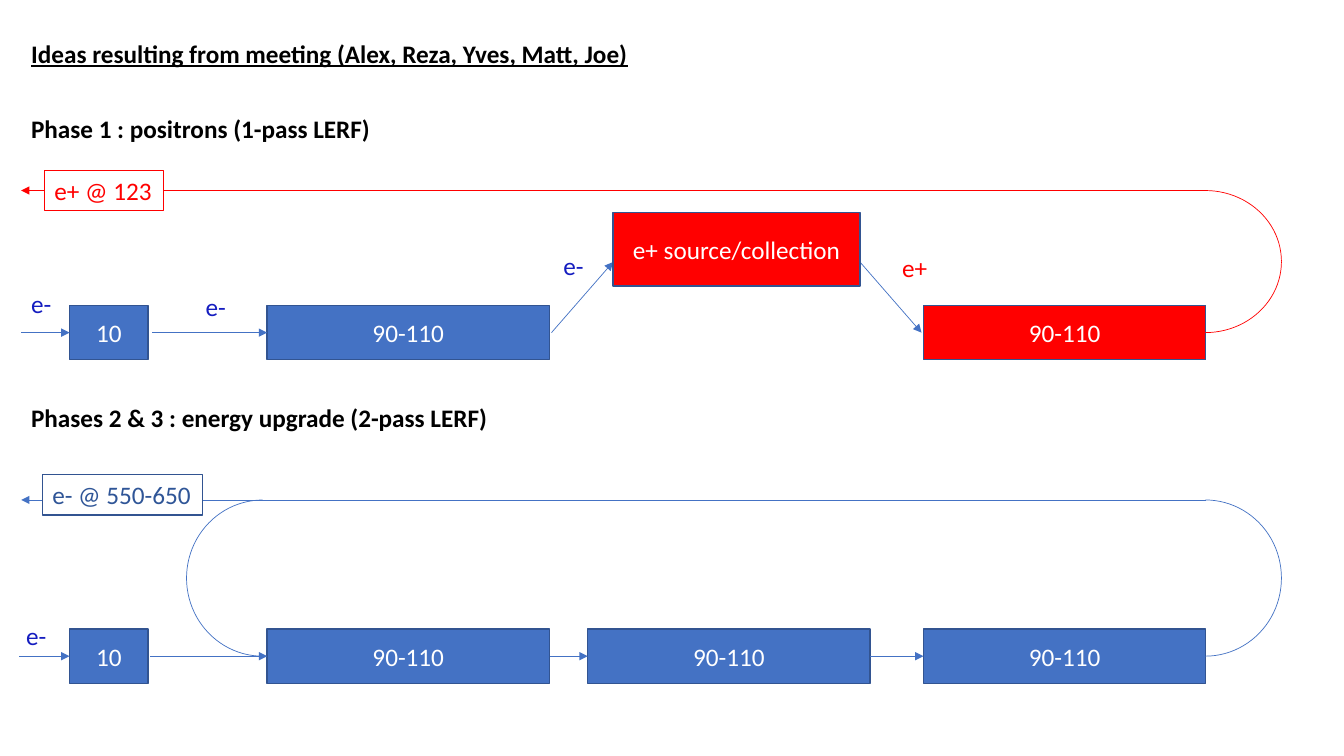
"""Build the slide of positron and energy upgrade phases as beamline diagrams."""
from lxml import etree
from pptx import Presentation
from pptx.dml.color import RGBColor
from pptx.enum.shapes import MSO_CONNECTOR, MSO_SHAPE
from pptx.enum.text import MSO_ANCHOR, MSO_AUTO_SIZE, PP_ALIGN
from pptx.oxml.ns import qn
from pptx.util import Inches, Pt

STRAIGHT = MSO_CONNECTOR.STRAIGHT
RECTANGLE, ARC = MSO_SHAPE.RECTANGLE, MSO_SHAPE.ARC
TOP, MIDDLE = MSO_ANCHOR.TOP, MSO_ANCHOR.MIDDLE
LEFT, CENTER = PP_ALIGN.LEFT, PP_ALIGN.CENTER
FIXED = MSO_AUTO_SIZE.NONE
LEFT_SIDE, RIGHT_SIDE = 1, 3

color = RGBColor.from_string
BLUE, EDGE, RED, WHITE, BLACK = "4472C4", "325491", "FF0000", "FFFFFF", "000000"
ELECTRON, ENERGY = "151DC0", "2F5597"


def write(box, text, ink, align=LEFT, anchor=TOP, bold=False, underline=False):
    frame = box.text_frame
    frame.auto_size = FIXED
    frame.word_wrap = align == CENTER
    frame.vertical_anchor = anchor
    para = frame.paragraphs[0]
    para.alignment = align
    span = para.add_run()
    span.text = text
    span.font.name = "Calibri"
    span.font.size = Pt(18)
    span.font.bold = bold
    span.font.underline = underline
    span.font.color.rgb = color(ink)


def add_arrow(shapes, start, end, ink):
    arrow = shapes.add_connector(STRAIGHT, *map(Inches, start + end))
    arrow.line.color.rgb = color(ink)
    arrow.line.width = Pt(0.5)
    etree.SubElement(arrow.line._get_or_add_ln(), qn("a:tailEnd"), type="triangle")
    etree.SubElement(arrow._element.spPr, qn("a:effectLst"))
    return arrow


deck = Presentation()
deck.slide_width, deck.slide_height = Inches(13.33), Inches(7.5)
page = deck.slides.add_slide(deck.slide_layouts[5])

title = page.shapes.title
title.left, title.top = Inches(0.21), Inches(0.33)
title.width, title.height = Inches(6.23), Inches(0.4)
write(title, "Ideas resulting from meeting (Alex, Reza, Yves, Matt, Joe)", BLACK,
      bold=True, underline=True)

source_group = page.shapes.add_group_shape()
add_arrow(source_group.shapes, (5.47, 3.3), (6.08, 2.6), BLUE)
add_arrow(source_group.shapes, (8.53, 2.6), (9.14, 3.3), BLUE)

boxes = {}
for name, shapes, left, top, width, height, fill, text in [
    ("injector 1", page.shapes, 0.69, 3.03, 0.78, 0.54, BLUE, "10"),
    ("first linac 1", page.shapes, 2.65, 3.03, 2.8, 0.54, BLUE, "90-110"),
    ("last linac 1", page.shapes, 9.16, 3.03, 2.8, 0.54, RED, "90-110"),
    ("injector 2", page.shapes, 0.69, 6.24, 0.78, 0.54, BLUE, "10"),
    ("first linac 2", page.shapes, 2.65, 6.24, 2.8, 0.54, BLUE, "90-110"),
    ("middle linac 2", page.shapes, 5.83, 6.24, 2.8, 0.54, BLUE, "90-110"),
    ("last linac 2", page.shapes, 9.16, 6.24, 2.8, 0.54, BLUE, "90-110"),
    ("source", source_group.shapes, 6.08, 2.11, 2.45, 0.73, RED, "e+ source/collection"),
]:
    box = shapes.add_shape(RECTANGLE, *map(Inches, (left, top, width, height)))
    box.shadow.inherit = False
    box.fill.solid()
    box.fill.fore_color.rgb = color(fill)
    box.line.color.rgb = color(EDGE)
    box.line.width = Pt(1)
    write(box, text, WHITE, CENTER, MIDDLE)
    boxes[name] = box

for start, end, y, origin, target in [
    (0.21, 0.69, 3.3, None, "injector 1"),
    (1.51, 2.65, 3.3, None, "first linac 1"),
    (0.19, 0.69, 6.51, None, "injector 2"),
    (1.49, 2.65, 6.51, None, "first linac 2"),
    (5.45, 5.83, 6.51, "first linac 2", "middle linac 2"),
    (8.63, 9.16, 6.51, "middle linac 2", "last linac 2"),
]:
    arrow = add_arrow(page.shapes, (start, y), (end, y), BLUE)
    if origin:
        arrow.begin_connect(boxes[origin], RIGHT_SIDE)
    arrow.end_connect(boxes[target], LEFT_SIDE)

for left, top, height, rotation, ink in [
    (11.2, 1.89, 1.41, 0, RED),
    (11.2, 4.96, 1.55, 0, BLUE),
    (1.85, 4.96, 1.55, 180, BLUE),
]:
    bend = page.shapes.add_group_shape()
    for flipped in (False, True):
        arc = bend.shapes.add_shape(ARC, *map(Inches, (left, top, 1.51, height)))
        arc.shadow.inherit = False
        arc.fill.background()
        arc.line.color.rgb = color(ink)
        arc.line.width = Pt(0.5)
        arc.rotation = rotation
        if flipped:
            arc._element.spPr.xfrm.set("flipV", "1")

for y, ink in [(1.89, RED), (4.96, BLUE)]:
    add_arrow(page.shapes, (11.96, y), (0.21, y), ink)

for left, top, width, text, ink, bold in [
    (0.21, 1.08, 3.59, "Phase 1 : positrons (1-pass LERF)", BLACK, True),
    (0.21, 3.94, 4.77, "Phases 2 & 3 : energy upgrade (2-pass LERF)", BLACK, True),
    (0.21, 2.81, 0.41, "e-", ELECTRON, False),
    (1.94, 2.84, 0.41, "e-", ELECTRON, False),
    (5.49, 2.43, 0.41, "e-", ELECTRON, False),
    (8.85, 2.45, 0.45, "e+", RED, False),
    (0.16, 6.1, 0.41, "e-", ELECTRON, False),
]:
    label = page.shapes.add_textbox(*map(Inches, (left, top, width, 0.4)))
    write(label, text, ink, bold=bold)

for left, top, width, text, ink, edge in [
    (0.44, 1.69, 1.18, "e+ @ 123", RED, RED),
    (0.42, 4.71, 1.59, "e- @ 550-650", ENERGY, EDGE),
]:
    output = page.shapes.add_shape(RECTANGLE, *map(Inches, (left, top, width, 0.4)))
    output.shadow.inherit = False
    output.fill.solid()
    output.fill.fore_color.rgb = color(WHITE)
    output.line.color.rgb = color(edge)
    output.line.width = Pt(0.75)
    write(output, text, ink)

deck.save("out.pptx")
